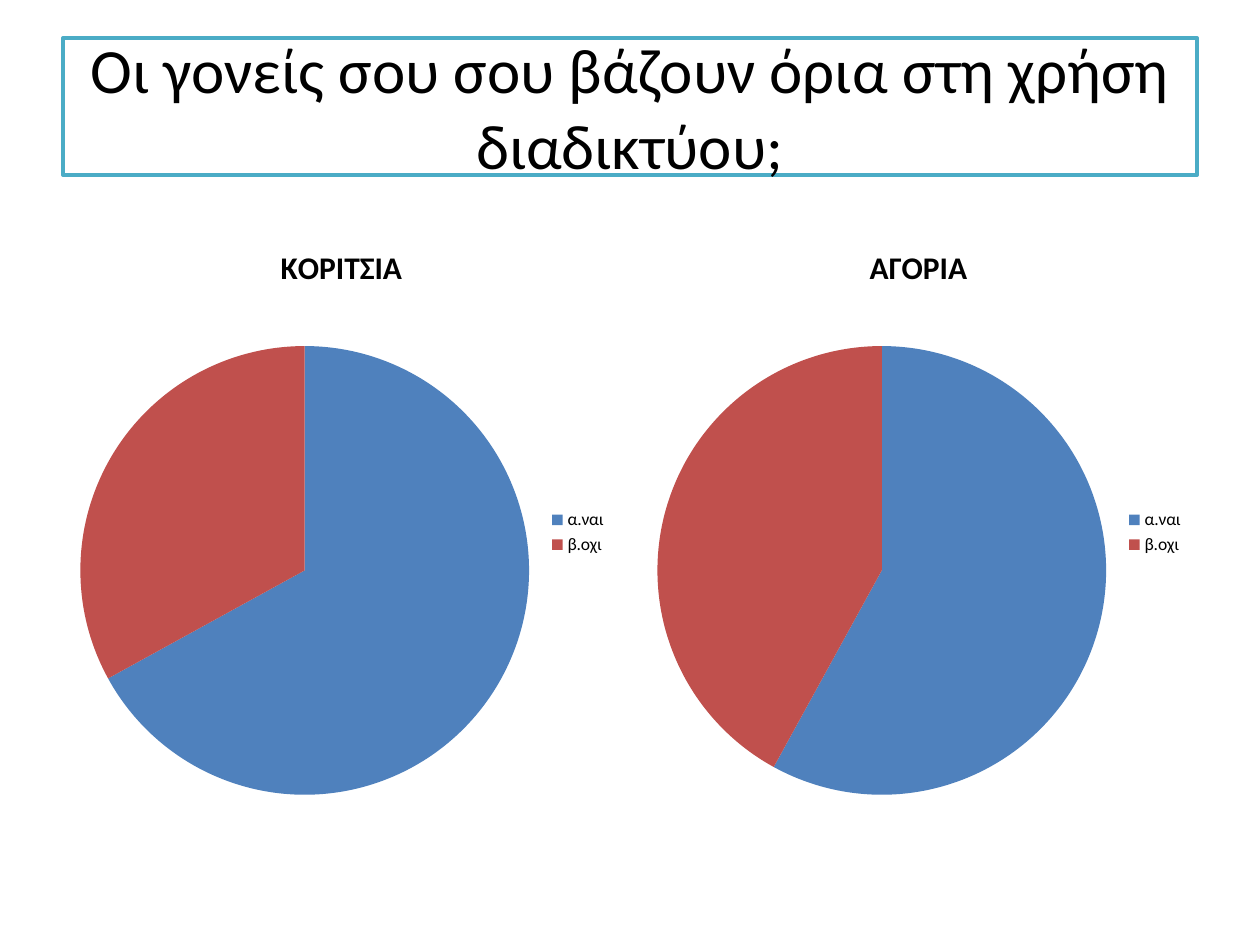
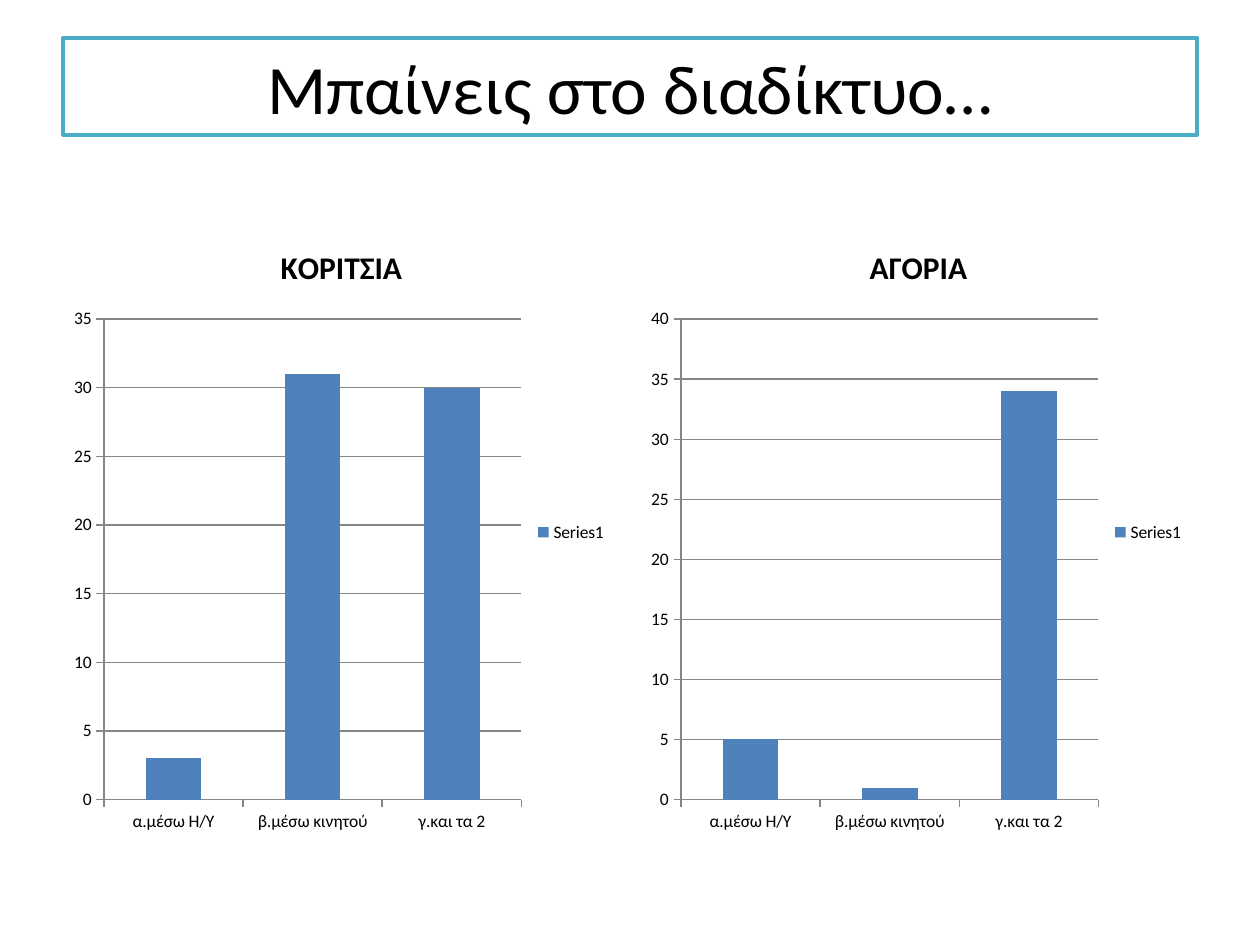
from dataclasses import dataclass

from pptx import Presentation
from pptx import util as u
from pptx.chart.chart import Chart
from pptx.chart.data import CategoryChartData
from pptx.dml.color import RGBColor
from pptx.enum import chart as charts
from pptx.enum import text

FONT = "Calibri"
BLACK, WHITE, TEAL = "000000", "FFFFFF", "4BACC6"
BLUE, RED, GRAY = "4F81BD", "C0504D", "868686"
MARGIN, CONTENT_WIDTH = 0.5, 9
CHART_TOP, CHART_WIDTH, CHART_HEIGHT = 1.75, 4.42, 4.95
PIE = charts.XL_CHART_TYPE.PIE
COLUMN = charts.XL_CHART_TYPE.COLUMN_CLUSTERED


@dataclass
class Question:
    title: str
    title_size: float
    title_height: float
    chart_type: charts.XL_CHART_TYPE
    series_name: str
    answers: list[str]
    groups: dict[str, list[int]]


QUESTIONS = [
    Question(
        "Οι γονείς σου σου βάζουν όρια στη χρήση διαδικτύου;", 36, 1.09,
        PIE, "Series 1", ["α.ναι", "β.οχι"],
        {"ΚΟΡΙΤΣΙΑ": [67, 33], "ΑΓΟΡΙΑ": [58, 42]},
    ),
    Question(
        "Μπαίνεις στο διαδίκτυο…", 39.6, 0.77,
        COLUMN, "Series1", ["α.μέσω Η/Υ", "β.μέσω κινητού", "γ.και τα 2"],
        {"ΚΟΡΙΤΣΙΑ": [3, 31, 30], "ΑΓΟΡΙΑ": [5, 1, 34]},
    ),
]


def rgb(value: str) -> RGBColor:
    return RGBColor.from_string(value)


def paint(target, color: str) -> None:
    """Give a shape, series or point a solid fill."""
    target.fill.solid()
    target.fill.fore_color.rgb = rgb(color)


def format_font(font, *, size: float, color: str = BLACK, bold: bool = False) -> None:
    font.name = FONT
    font.size = u.Pt(size)
    font.bold = bold
    font.color.rgb = rgb(color)


def write(frame, content: str, *, align=text.PP_ALIGN.CENTER, **font_format) -> None:
    frame.text = content
    paragraph = frame.paragraphs[0]
    paragraph.alignment = align
    format_font(paragraph.runs[0].font, **font_format)


def add_title(slide, question: Question) -> None:
    title = slide.shapes.title
    title.left, title.top = u.Inches(MARGIN), u.Inches(0.3)
    title.width, title.height = u.Inches(CONTENT_WIDTH), u.Inches(question.title_height)
    paint(title, WHITE)
    title.line.color.rgb = rgb(TEAL)
    title.line.width = u.Pt(2)
    frame = title.text_frame
    frame.word_wrap = True
    frame.auto_size = text.MSO_AUTO_SIZE.NONE
    frame.vertical_anchor = text.MSO_ANCHOR.MIDDLE
    write(frame, question.title, size=question.title_size)


def style_pie(chart: Chart) -> None:
    plot = chart.plots[0]
    plot.vary_by_categories = True
    for index, color in enumerate((BLUE, RED)):
        paint(plot.series[0].points[index].format, color)


def style_columns(chart: Chart) -> None:
    plot = chart.plots[0]
    plot.vary_by_categories = False
    plot.gap_width = 150
    paint(plot.series[0].format, BLUE)
    chart.value_axis.has_major_gridlines = True
    axes = (chart.category_axis, chart.value_axis)
    for axis in axes:
        axis.major_tick_mark = charts.XL_TICK_MARK.OUTSIDE
        axis.minor_tick_mark = charts.XL_TICK_MARK.NONE
    for line in [axis.format.line for axis in axes] + [
        chart.value_axis.major_gridlines.format.line
    ]:
        line.color.rgb = rgb(GRAY)
        line.width = u.Pt(0.75)


def add_group_chart(slide, question: Question, group: str, left: float) -> None:
    data = CategoryChartData()
    data.categories = question.answers
    data.add_series(question.series_name, question.groups[group])
    chart = slide.shapes.add_chart(
        question.chart_type, u.Inches(left), u.Inches(CHART_TOP),
        u.Inches(CHART_WIDTH), u.Inches(CHART_HEIGHT), data,
    ).chart
    format_font(chart.font, size=10)
    chart.has_title = True
    write(chart.chart_title.text_frame, group, size=18, bold=True)
    chart.chart_title.include_in_layout = False
    chart.has_legend = True
    chart.legend.position = charts.XL_LEGEND_POSITION.RIGHT
    chart.legend.include_in_layout = False
    if question.chart_type == PIE:
        style_pie(chart)
    else:
        style_columns(chart)


def main() -> None:
    presentation = Presentation()
    presentation.slide_width, presentation.slide_height = u.Inches(10), u.Inches(7.5)
    title_only = presentation.slide_layouts.get_by_name("Title Only")
    for question in QUESTIONS:
        slide = presentation.slides.add_slide(title_only)
        add_title(slide, question)
        lefts = (MARGIN, MARGIN + CONTENT_WIDTH - CHART_WIDTH)
        for group, left in zip(question.groups, lefts):
            add_group_chart(slide, question, group, left)
    presentation.save("out.pptx")


if __name__ == "__main__":
    main()
